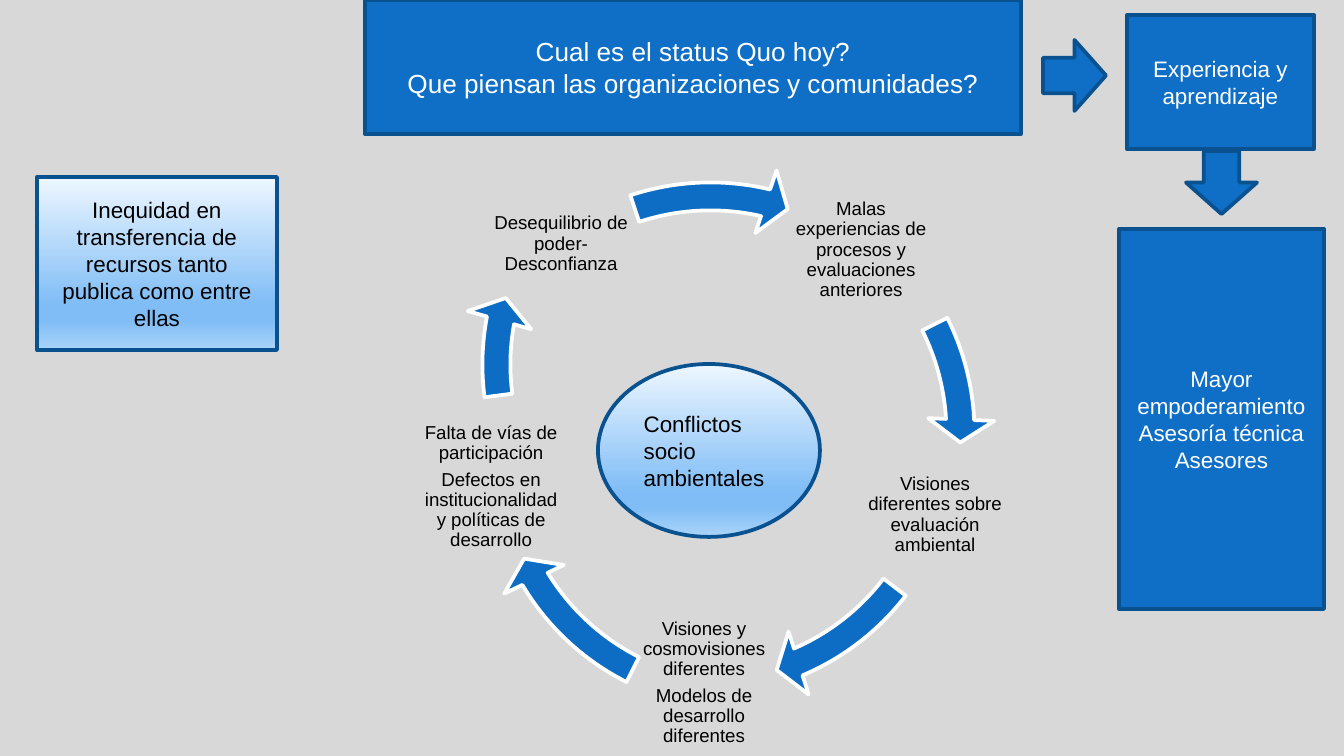
from copy import deepcopy
from dataclasses import dataclass
from math import asin, cos, radians, sin, tan

from lxml import etree
from pptx import Presentation
from pptx.dml.color import RGBColor
from pptx.enum.shapes import MSO_SHAPE
from pptx.enum.text import MSO_ANCHOR, PP_ALIGN
from pptx.oxml.ns import qn
from pptx.util import Emu, Pt

RECTANGLE, OVAL, ARROW = MSO_SHAPE.RECTANGLE, MSO_SHAPE.OVAL, MSO_SHAPE.RIGHT_ARROW
CENTER, JUSTIFY = PP_ALIGN.CENTER, PP_ALIGN.JUSTIFY
MIDDLE = MSO_ANCHOR.MIDDLE

SCALE = 914400 / 134.4  # EMU per px
FONT = "Arial"
BLACK, WHITE, GRAY = "000000", "FFFFFF", "D8D8D8"
BLUE, NAVY, CYCLE_BLUE = "0F6FC6", "0A5190", "0D6DC5"
GLOSS = ((0, "EEF7FF"), (0.74, "80BDF6"), (0.83, "80BDF6"), (1, "AAD4F9"))

# Cycle arrows and labels, in px
CYCLE_SIZE = 547
RADIUS, SHAFT_HALF, HEAD_HALF, HEAD_LENGTH = 241, 14, 33, 23
LABEL_SIZE = 146

Point = tuple[float, float]


@dataclass
class Box:
    left: int
    top: int
    width: int
    height: int
    lines: tuple = ()
    kind: int = RECTANGLE
    glossy: bool = False
    size: int = 12
    align: int = CENTER
    rotation: int = 0


@dataclass
class CycleArrow:
    left: int  # of the square around the whole circle
    top: int
    start: float  # degrees, clockwise from the right
    tip: float


@dataclass
class Label:
    left: int
    top: int
    lines: tuple


BOXES = (
    Box(365, 0, 656, 134, ("Cual es el status Quo hoy?",
                           "Que piensan las organizaciones y comunidades?"), size=14),
    Box(598, 364, 222, 173, ("Conflictos socio ambientales",),
        kind=OVAL, glossy=True, align=JUSTIFY),
    Box(37, 177, 240, 173,
        ("Inequidad en transferencia de recursos tanto publica como entre ellas",),
        glossy=True),
    Box(1127, 15, 187, 134, ("Experiencia y aprendizaje",)),
    Box(1043, 40, 63, 71, kind=ARROW),
    Box(1119, 229, 205, 380, ("Mayor empoderamiento", "Asesoría técnica", "Asesores")),
    Box(1190, 147, 63, 71, kind=ARROW, rotation=90),
)
CYCLE_ARROWS = (
    CycleArrow(446, 159, -26.7, 2.4),
    CycleArrow(430, 167, 37.5, 72.3),
    CycleArrow(468, 181, 116.8, 154.4),
    CycleArrow(464, 91, 172.6, 196),
    CycleArrow(437, 164, 251.7, 288.7),
)
LABELS = (
    Label(788, 177, ("Malas experiencias de procesos y evaluaciones anteriores",)),
    Label(862, 442, ("Visiones diferentes sobre evaluación ambiental",)),
    Label(631, 610, ("Visiones y cosmovisiones diferentes", "Modelos de desarrollo diferentes")),
    Label(418, 414, ("Falta de vías de participación",
                     "Defectos en institucionalidad y políticas de desarrollo")),
    Label(488, 171, ("Desequilibrio de poder-Desconfianza",)),
)


def px(length: float) -> Emu:
    return Emu(round(length * SCALE))


def color(code: str) -> RGBColor:
    return RGBColor.from_string(code)


def paint(shape, fill: str, line: str) -> None:
    shape.shadow.inherit = False
    shape.fill.solid()
    shape.fill.fore_color.rgb = color(fill)
    shape.line.color.rgb = color(line)
    shape.line.width = Pt(2)


def add_gloss(shape) -> None:
    shape.fill.gradient()
    shape.fill.gradient_angle = 270
    stop_list = shape._element.spPr.find(qn("a:gradFill")).find(qn("a:gsLst"))
    while len(stop_list) < len(GLOSS):
        stop_list.append(deepcopy(stop_list[0]))
    for stop, (position, code) in zip(shape.fill.gradient_stops, GLOSS):
        stop.position = position
        stop.color.rgb = color(code)


def write(frame, lines: tuple, size: int, code: str, align: int) -> None:
    frame.word_wrap = True
    frame.vertical_anchor = MIDDLE
    for index, line in enumerate(lines):
        para = frame.paragraphs[0] if index == 0 else frame.add_paragraph()
        para.text = line
        para.alignment = align
        para.font.name = FONT
        para.font.size = Pt(size)
        para.font.color.rgb = color(code)


def draw_box(page, box: Box) -> None:
    shape = page.shapes.add_shape(box.kind, px(box.left), px(box.top),
                                  px(box.width), px(box.height))
    paint(shape, BLUE, NAVY)
    shape.rotation = box.rotation
    if box.glossy:
        add_gloss(shape)
    if box.lines:
        write(shape.text_frame, box.lines, box.size, BLACK if box.glossy else WHITE, box.align)


def polar(radius: float, angle: float, forward: float = 0) -> Point:
    """Point in the circle's square, moved forward along the clockwise tangent."""
    return (CYCLE_SIZE / 2 + radius * cos(angle) - forward * sin(angle),
            CYCLE_SIZE / 2 + radius * sin(angle) + forward * cos(angle))


def arc(radius: float, start: float, end: float) -> list[Point]:
    """Four control points of the curve from start to end."""
    reach = radius * 4 / 3 * tan((end - start) / 4)
    return [polar(radius, start), polar(radius, start, reach),
            polar(radius, end, -reach), polar(radius, end)]


def add_step(outline, tag: str, points: list[Point]) -> None:
    step = etree.SubElement(outline, qn(tag))
    for x, y in points:
        etree.SubElement(step, qn("a:pt"), x=str(px(x)), y=str(px(y)))


def draw_cycle_arrow(page, arrow: CycleArrow) -> None:
    start, tip = radians(arrow.start), radians(arrow.tip)
    outer_radius, inner_radius = RADIUS + SHAFT_HALF, RADIUS - SHAFT_HALF
    outer = arc(outer_radius, start, tip - asin(HEAD_LENGTH / outer_radius))
    inner = arc(inner_radius, tip - asin(HEAD_LENGTH / inner_radius), start)
    head = [polar(RADIUS + HEAD_HALF, tip, -HEAD_LENGTH), polar(RADIUS, tip),
            polar(RADIUS - HEAD_HALF, tip, -HEAD_LENGTH), inner[0]]

    # The square sets the frame, then its outline becomes the curved arrow
    side = px(CYCLE_SIZE)
    builder = page.shapes.build_freeform(0, 0)
    builder.add_line_segments([(side, 0), (side, side), (0, side)])
    shape = builder.convert_to_shape(px(arrow.left), px(arrow.top))
    outline = next(shape._element.iter(qn("a:path")))
    for step in list(outline):
        outline.remove(step)
    add_step(outline, "a:moveTo", outer[:1])
    add_step(outline, "a:cubicBezTo", outer[1:])
    for corner in head:
        add_step(outline, "a:lnTo", [corner])
    add_step(outline, "a:cubicBezTo", inner[1:])
    add_step(outline, "a:close", [])
    paint(shape, CYCLE_BLUE, WHITE)


def draw_label(page, label: Label) -> None:
    box = page.shapes.add_textbox(px(label.left), px(label.top), px(LABEL_SIZE), px(LABEL_SIZE))
    frame = box.text_frame
    frame.margin_left = frame.margin_right = frame.margin_top = frame.margin_bottom = px(1)
    write(frame, label.lines, 10, BLACK, CENTER)
    for index, para in enumerate(frame.paragraphs):
        para.line_spacing = 0.9
        para.space_before = Pt(3.5 if index else 0)


def main() -> None:
    deck = Presentation()
    deck.slide_width, deck.slide_height = px(1344), px(756)
    page = deck.slides.add_slide(deck.slide_layouts[6])
    page.background.fill.solid()
    page.background.fill.fore_color.rgb = color(GRAY)

    # Conflict cycle
    for label, arrow in zip(LABELS, CYCLE_ARROWS):
        draw_label(page, label)
        draw_cycle_arrow(page, arrow)

    # Surrounding boxes and straight arrows
    for box in BOXES:
        draw_box(page, box)

    deck.save("out.pptx")


if __name__ == "__main__":
    main()
